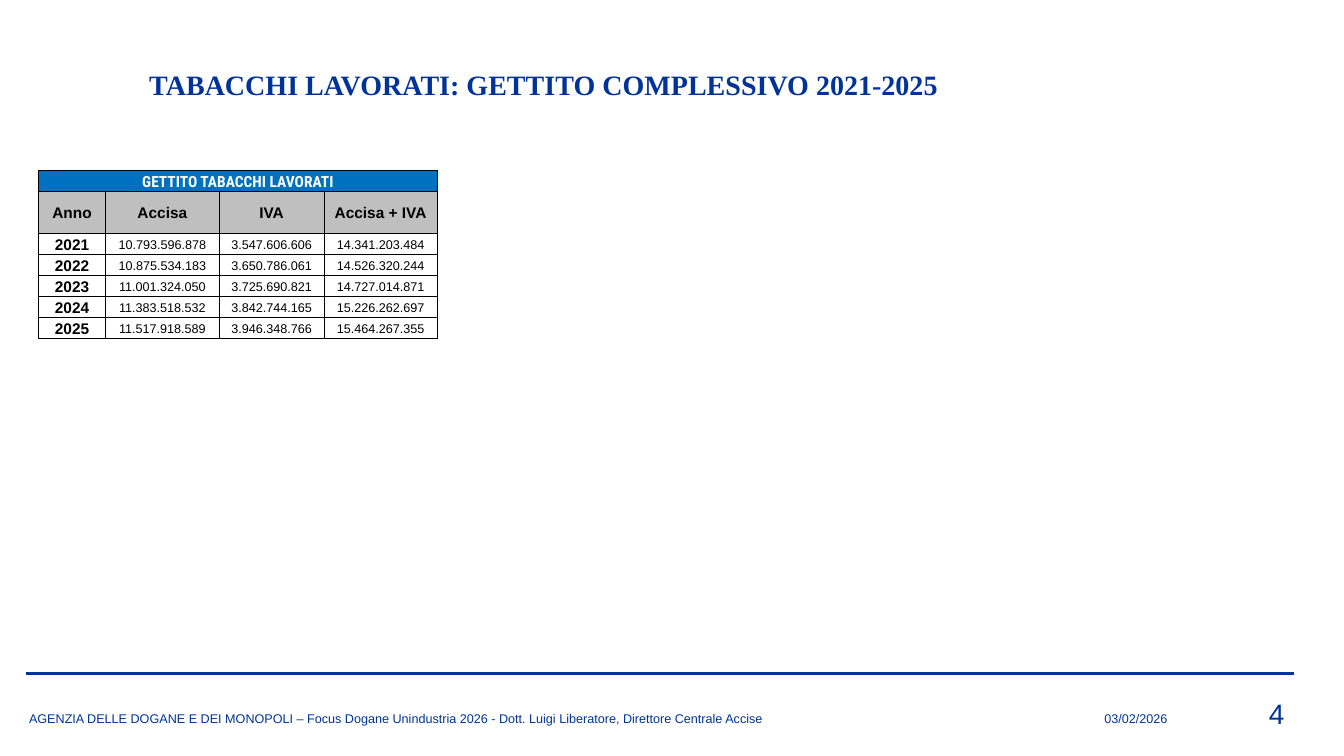
"""Build the slide on tobacco tax revenue, 2021-2025."""
import pptx
import pptx.dml.color
import pptx.enum.shapes
import pptx.enum.text
import pptx.oxml
import pptx.util

Pt = pptx.util.Pt
ALIGN = pptx.enum.text.PP_ALIGN
ANCHOR = pptx.enum.text.MSO_ANCHOR
NAVY = "003399"
NS = 'xmlns:a="http://schemas.openxmlformats.org/drawingml/2006/main"'


def paint(color_format, hex_color):
    color_format.rgb = pptx.dml.color.RGBColor.from_string(hex_color)


def write(paragraph, text, align, color, **font_format):
    paragraph.alignment = align
    run = paragraph.add_run()
    run.text = text
    for attribute, value in font_format.items():
        setattr(run.font, attribute, value)
    paint(run.font.color, color)


deck = pptx.Presentation()
deck.slide_width, deck.slide_height = Pt(960), Pt(540)
slide = deck.slides.add_slide(deck.slide_layouts[6])

footer_rule = slide.shapes.add_connector(
    pptx.enum.shapes.MSO_CONNECTOR.STRAIGHT, Pt(18.5), Pt(481), Pt(924.5), Pt(481))
footer_rule.line.width = Pt(2.25)
paint(footer_rule.line.color, NAVY)
footer_rule._element.spPr.append(pptx.oxml.parse_xml(f"<a:effectLst {NS}/>"))

captions = [
    ("TABACCHI LAVORATI: GETTITO COMPLESSIVO 2021-2025", (99.5, 44.7, 845, 31.5),
     ANCHOR.TOP, 3.6, ALIGN.LEFT, {"name": "Times New Roman", "size": Pt(20), "bold": True}),
    ("4", (841, 483, 83.5, 39),
     ANCHOR.BOTTOM, 0.7, ALIGN.RIGHT, {"name": "Arial", "size": Pt(20)}),
    ("AGENZIA DELLE DOGANE E DEI MONOPOLI – Focus Dogane Unindustria 2026 - "
     "Dott. Luigi Liberatore, Direttore Centrale Accise", (13.7, 490.5, 636.5, 31.5),
     ANCHOR.BOTTOM, 3.6, ALIGN.LEFT, {"name": "Arial", "size": Pt(9)}),
    ("03/02/2026", (735, 493, 106, 29),
     ANCHOR.BOTTOM, 3.6, ALIGN.RIGHT, {"name": "Arial", "size": Pt(9)}),
]
for text, place, anchor, bottom_inset, align, font_format in captions:
    frame = slide.shapes.add_textbox(*map(Pt, place)).text_frame
    frame.word_wrap = True
    frame.vertical_anchor = anchor
    frame.margin_bottom = Pt(bottom_inset)
    write(frame.paragraphs[0], text, align, NAVY, **font_format)

revenue_rows = [
    ["GETTITO TABACCHI LAVORATI"],
    ["Anno", "Accisa", "IVA", "Accisa + IVA"],
    ["2021", "10.793.596.878", "3.547.606.606", "14.341.203.484"],
    ["2022", "10.875.534.183", "3.650.786.061", "14.526.320.244"],
    ["2023", "11.001.324.050", "3.725.690.821", "14.727.014.871"],
    ["2024", "11.383.518.532", "3.842.744.165", "15.226.262.697"],
    ["2025", "11.517.918.589", "3.946.348.766", "15.464.267.355"],
]
column_widths = [48, 81, 75, 81]
row_heights = [15, 30] + [15] * 5
revenue = slide.shapes.add_table(
    len(row_heights), len(column_widths), Pt(27.5), Pt(122),
    Pt(sum(column_widths)), Pt(sum(row_heights))).table
revenue.first_row = revenue.horz_banding = False
for column, width in zip(revenue.columns, column_widths):
    column.width = Pt(width)
for row, height in zip(revenue.rows, row_heights):
    row.height = Pt(height)
revenue.cell(0, 0).merge(revenue.cell(0, 3))

cell_format = {"margin_left": Pt(0.7), "margin_right": Pt(0.7), "margin_top": Pt(0.7),
               "margin_bottom": Pt(0), "vertical_anchor": ANCHOR.MIDDLE}
header_fills = ["0070C0", "BFBFBF"]
for r, row in enumerate(revenue.rows):
    for c, cell in enumerate(row.cells):
        for attribute, value in cell_format.items():
            setattr(cell, attribute, value)
        for side in "LRTB":
            cell._tc.get_or_add_tcPr().append(pptx.oxml.parse_xml(
                f'<a:ln{side} {NS} w="6350"><a:solidFill><a:srgbClr val="000000"/>'
                f"</a:solidFill></a:ln{side}>"))
        if r < len(header_fills):
            cell.fill.solid()
            paint(cell.fill.fore_color, header_fills[r])
        else:
            cell.fill.background()
        if c < len(revenue_rows[r]):
            heading = r < 2 or c == 0
            write(cell.text_frame.paragraphs[0], revenue_rows[r][c], ALIGN.CENTER,
                  "FFFFFF" if r == 0 else "000000",
                  name="Roboto Condensed" if r == 0 else "Arial",
                  size=Pt(11 if heading else 9), bold=heading)

deck.save("out.pptx")
